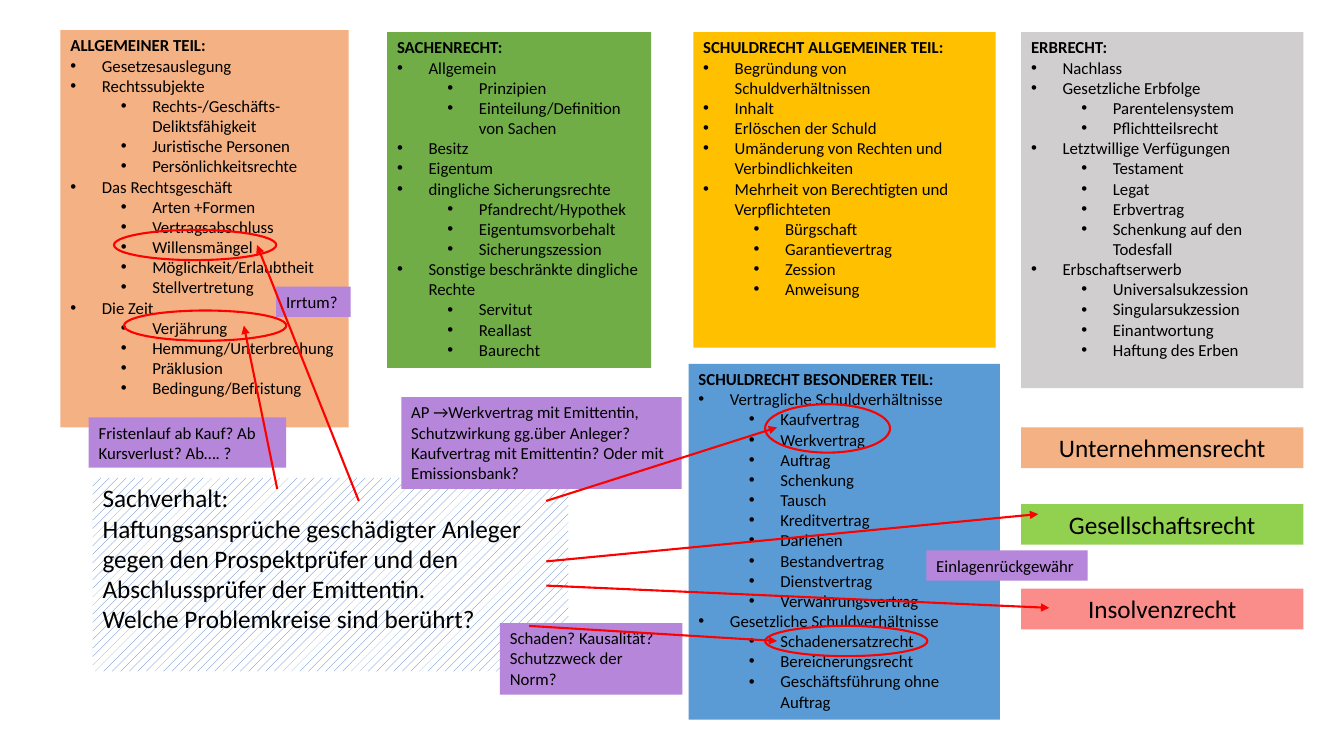
from lxml.etree import SubElement
from pptx import Presentation
from pptx.dml.color import RGBColor
from pptx.enum.dml import MSO_PATTERN as Pattern
from pptx.enum.shapes import MSO_CONNECTOR as Connector, MSO_SHAPE as Shape
from pptx.enum.text import MSO_ANCHOR as Anchor, PP_ALIGN as Align
from pptx.oxml.ns import qn
from pptx.util import Pt

COLORS = {
    "text": "000000", "white": "FFFFFF", "hatch": "4472C4", "mark": "FF0000",
    "note": "B686DA", "orange": "F4B183", "green": "70AD47", "yellow": "FFC000",
    "blue": "5B9BD5", "grey": "D0CECE", "lime": "92D050", "salmon": "FA8D8A",
}

# Each subject: box, colour, title, topics with their subtopics
SUBJECTS = [
    ((43.2, 21.6, 205.9, 283.7), "orange", "ALLGEMEINER TEIL:", [
        ("Gesetzesauslegung", []),
        ("Rechtssubjekte", ["Rechts-/Geschäfts-Deliktsfähigkeit", "Juristische Personen",
                            "Persönlichkeitsrechte"]),
        ("Das Rechtsgeschäft", ["Arten +Formen", "Vertragsabschluss", "Willensmängel",
                                "Möglichkeit/Erlaubtheit", "Stellvertretung"]),
        ("Die Zeit", ["Verjährung", "Hemmung/Unterbrechung", "Präklusion",
                      "Bedingung/Befristung"]),
    ]),
    ((276.5, 23, 188.6, 239.8), "green", "SACHENRECHT:", [
        ("Allgemein", ["Prinzipien", "Einteilung/Definition von Sachen"]),
        ("Besitz", []),
        ("Eigentum", []),
        ("dingliche Sicherungsrechte", ["Pfandrecht/Hypothek", "Eigentumsvorbehalt",
                                        "Sicherungszession"]),
        ("Sonstige beschränkte dingliche Rechte", ["Servitut", "Reallast", "Baurecht"]),
    ]),
    ((495.2, 23, 216, 225.4), "yellow", "SCHULDRECHT ALLGEMEINER TEIL:", [
        ("Begründung von Schuldverhältnissen", []),
        ("Inhalt", []),
        ("Erlöschen der Schuld", []),
        ("Umänderung von Rechten und Verbindlichkeiten", []),
        ("Mehrheit von Berechtigten und Verpflichteten",
         ["Bürgschaft", "Garantievertrag", "Zession", "Anweisung"]),
    ]),
    ((491.8, 259.9, 222.5, 254.2), "blue", "SCHULDRECHT BESONDERER TEIL:", [
        ("Vertragliche Schuldverhältnisse",
         ["Kaufvertrag", "Werkvertrag", "Auftrag", "Schenkung", "Tausch", "Kreditvertrag",
          "Darlehen", "Bestandvertrag", "Dienstvertrag", "Verwahrungsvertrag"]),
        ("Gesetzliche Schuldverhältnisse",
         ["Schadenersatzrecht", "Bereicherungsrecht", "Geschäftsführung ohne Auftrag"]),
    ]),
    ((729.4, 23, 201.6, 254.2), "grey", "ERBRECHT:", [
        ("Nachlass", []),
        ("Gesetzliche Erbfolge", ["Parentelensystem", "Pflichtteilsrecht"]),
        ("Letztwillige Verfügungen", ["Testament", "Legat", "Erbvertrag",
                                      "Schenkung auf den Todesfall"]),
        ("Erbschaftserwerb", ["Universalsukzession", "Singularsukzession", "Einantwortung",
                              "Haftung des Erben"]),
    ]),
]

CASE_FACTS = [
    "Sachverhalt:",
    "Haftungsansprüche geschädigter Anleger gegen den Prospektprüfer und den "
    "Abschlussprüfer der Emittentin.",
    "Welche Problemkreise sind berührt?",
]

HIGHLIGHTS = [
    (546.5, 447.1, 115.9, 21.6),  # Schadenersatzrecht
    (81.4, 164.2, 115.9, 21.6),   # Willensmängel
    (88.6, 221.8, 115.9, 21.6),   # Verjährung
    (546.5, 288.7, 89.3, 34.6),   # Kaufvertrag, Werkvertrag
]

NOTES = [
    ((197.3, 204.8, 53.3, 21.6), ["Irrtum?"]),
    ((63.4, 298.1, 141.1, 36), ["Fristenlauf ab Kauf? Ab Kursverlust? Ab…. ?"]),
    ((286.6, 283.7, 200.2, 65.5),
     ["AP →Werkvertrag mit Emittentin, Schutzwirkung gg.über Anleger?",
      "Kaufvertrag mit Emittentin? Oder mit Emissionsbank?"]),
    ((357.1, 445, 130.3, 51.1), ["Schaden? Kausalität?", "Schutzzweck der Norm?"]),
]
REFUND_NOTE = ((661.7, 393.1, 115.2, 21.6), ["Einlagenrückgewähr"])

RELATED_AREAS = [
    ("Unternehmensrecht", 305.3, "orange"),
    ("Gesellschaftsrecht", 360, "lime"),
    ("Insolvenzrecht", 420.5, "salmon"),
]

ARROWS = [
    ((390.2, 357.8), (555.1, 305.3)),
    ((198, 349.2), (174.2, 232.6)),
    ((256.3, 357.8), (183.6, 175)),
    ((378, 447.1), (555.1, 457.9)),
    ((390.2, 401), (741.6, 367.2)),
    ((390.2, 418.3), (749.5, 434.2)),
]


def rgb(name):
    return RGBColor.from_string(COLORS[name])


def add_text(frame, text, size=12, bold=False, align=Align.LEFT, level=None):
    """Append a paragraph; a level makes it a bullet of that depth."""
    first = frame.paragraphs[0]
    paragraph = frame.add_paragraph() if first.runs else first
    paragraph.alignment = align
    run = paragraph.add_run()
    run.text = text
    run.font.name = "Calibri"
    run.font.size = Pt(size)
    run.font.bold = bold
    run.font.color.rgb = rgb("text")
    if level is not None:
        paragraph.level = level
        properties = paragraph._p.get_or_add_pPr()
        properties.set("marL", str(Pt(22.5 + 36 * level)))
        properties.set("indent", str(-Pt(22.5)))
        SubElement(properties, qn("a:buFont"), typeface="Arial")
        SubElement(properties, qn("a:buChar"), char="•")


class CaseMap:
    mark_width = Pt(1.5)

    def __init__(self, slide):
        self.slide = slide

    def shape(self, kind, box):
        shape = self.slide.shapes.add_shape(kind, *map(Pt, box))
        shape.shadow.inherit = False
        return shape

    def panel(self, box, fill, texts=(), **text_format):
        panel = self.shape(Shape.RECTANGLE, box)
        panel.line.fill.background()
        panel.fill.solid()
        panel.fill.fore_color.rgb = rgb(fill)
        frame = panel.text_frame
        frame.word_wrap = True
        frame.vertical_anchor = Anchor.TOP
        for text in texts:
            add_text(frame, text, **text_format)
        return panel

    def subject(self, box, fill, title, topics):
        frame = self.panel(box, fill, [title], bold=True).text_frame
        for topic, subtopics in topics:
            add_text(frame, topic, level=0)
            for subtopic in subtopics:
                add_text(frame, subtopic, level=1)

    def hatched_panel(self, box, texts, **text_format):
        fill = self.panel(box, "white", texts, **text_format).fill
        fill.patterned()
        fill.pattern = Pattern.PERCENT_20
        fill.fore_color.rgb = rgb("hatch")
        fill.back_color.rgb = rgb("white")

    def highlight(self, box):
        ring = self.shape(Shape.OVAL, box)
        ring.fill.background()
        self.mark(ring.line)

    def arrow(self, start, end):
        arrow = self.slide.shapes.add_connector(
            Connector.STRAIGHT, *map(Pt, start + end))
        self.mark(arrow.line)
        SubElement(arrow.line._get_or_add_ln(), qn("a:tailEnd"), type="triangle")
        SubElement(arrow._element.spPr, qn("a:effectLst"))

    def mark(self, line):
        line.color.rgb = rgb("mark")
        line.width = self.mark_width


def main():
    deck = Presentation()
    deck.slide_width, deck.slide_height = Pt(960), Pt(540)
    case_map = CaseMap(deck.slides.add_slide(deck.slide_layouts[6]))
    for subject in SUBJECTS:
        case_map.subject(*subject)
    case_map.hatched_panel((66.2, 341.3, 339.8, 138.2), CASE_FACTS, size=18)
    for box in HIGHLIGHTS:
        case_map.highlight(box)
    for box, questions in NOTES:
        case_map.panel(box, "note", questions)
    for area, top, fill in RELATED_AREAS:
        case_map.panel((729.4, top, 201.6, 29.1), fill, [area], size=18, align=Align.CENTER)
    refund_box, refund_text = REFUND_NOTE
    case_map.panel(refund_box, "note", refund_text)
    for start, end in ARROWS:
        case_map.arrow(start, end)
    deck.save("out.pptx")


if __name__ == "__main__":
    main()
